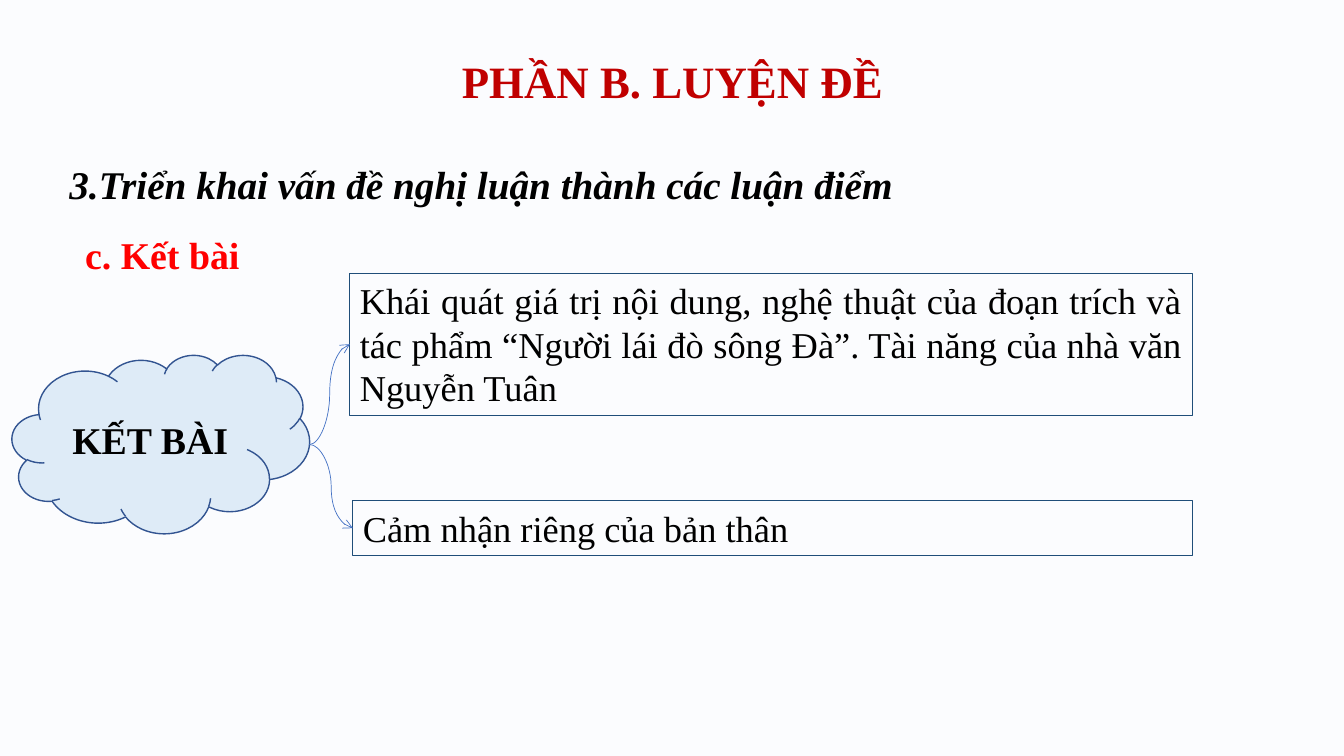
from lxml.etree import SubElement
from pptx import Presentation
from pptx.dml.color import RGBColor
from pptx.enum.shapes import MSO_CONNECTOR, MSO_SHAPE
from pptx.enum.text import MSO_ANCHOR, PP_ALIGN
from pptx.oxml.ns import qn
from pptx.util import Inches, Pt

PAPER = RGBColor(0xFB, 0xFC, 0xFE)
BLACK = RGBColor(0, 0, 0)
CRIMSON = RGBColor(0xC0, 0, 0)
RED = RGBColor(0xFF, 0, 0)
NAVY = RGBColor(0x1F, 0x4E, 0x79)
PALE = RGBColor(0xDE, 0xEB, 0xF7)
EDGE = RGBColor(0x32, 0x54, 0x91)
BLUE = RGBColor(0x44, 0x72, 0xC4)


class Board:
    face = "Times New Roman"

    def __init__(self, slide):
        self.slide = slide
        self.shapes = slide.shapes
        fill = slide.background.fill
        fill.solid()
        fill.fore_color.rgb = PAPER

    def put_text(self, shape, text, size, color=BLACK, align=PP_ALIGN.JUSTIFY,
                 anchor=MSO_ANCHOR.TOP, bold=False, italic=False, space=1.0, wrap=True):
        frame = shape.text_frame
        frame.word_wrap = wrap
        frame.vertical_anchor = anchor
        para = frame.paragraphs[0]
        para.text = text
        para.alignment = align
        para.line_spacing = space
        font = para.font
        font.name = self.face
        font.size = Pt(size)
        font.bold = bold
        font.italic = italic
        font.color.rgb = color

    def label(self, box, text, size, **style):
        shape = self.shapes.add_textbox(*map(Inches, box))
        self.put_text(shape, text, size, **style)

    def shape(self, kind, box, text, size, line, width, fill=None, **style):
        shape = self.shapes.add_shape(kind, *map(Inches, box))
        shape.shadow.inherit = False
        if fill is None:
            shape.fill.background()
        else:
            shape.fill.solid()
            shape.fill.fore_color.rgb = fill
        shape.line.color.rgb = line
        shape.line.width = Pt(width)
        self.put_text(shape, text, size, **style)

    def arrow(self, start, end):
        link = self.shapes.add_connector(MSO_CONNECTOR.CURVE, *map(Inches, start + end))
        link.line.color.rgb = BLUE
        link.line.width = Pt(0.5)
        props = link._element.spPr
        SubElement(props.find(qn("a:ln")), qn("a:tailEnd"), type="arrow")
        SubElement(props, qn("a:effectLst"))


def main():
    deck = Presentation()
    deck.slide_width = Inches(13.33)
    deck.slide_height = Inches(7.5)
    board = Board(deck.slides.add_slide(deck.slide_layouts[6]))

    board.label((0.92, 0.4, 11.5, 0.86), "PHẦN B. LUYỆN ĐỀ", 32, color=CRIMSON, bold=True,
                align=PP_ALIGN.CENTER, anchor=MSO_ANCHOR.MIDDLE, space=0.9)
    board.label((0.59, 1.31, 11.98, 0.72),
                "3.Triển khai vấn đề nghị luận thành các luận điểm", 28,
                bold=True, italic=True, space=1.5)
    board.label((0.74, 2.25, 1.74, 0.56), "c. Kết bài", 27, color=RED, bold=True,
                align=PP_ALIGN.CENTER, wrap=False)

    board.shape(MSO_SHAPE.CLOUD, (0.12, 3.52, 2.95, 1.77), "KẾT BÀI", 27, EDGE, 1, fill=PALE,
                bold=True, align=PP_ALIGN.CENTER, anchor=MSO_ANCHOR.MIDDLE)
    points = [
        ((3.47, 2.71, 8.36, 1.41),
         "Khái quát giá trị nội dung, nghệ thuật của đoạn trích và tác phẩm "
         "“Người lái đò sông Đà”. Tài năng của nhà văn Nguyễn Tuân"),
        ((3.5, 4.97, 8.33, 0.54), "Cảm nhận riêng của bản thân"),
    ]
    for box, text in points:
        board.shape(MSO_SHAPE.RECTANGLE, box, text, 26, NAVY, 0.75)
        left, top, _, height = box
        board.arrow((3.07, 4.41), (left, top + height / 2))

    deck.save("out.pptx")


if __name__ == "__main__":
    main()
